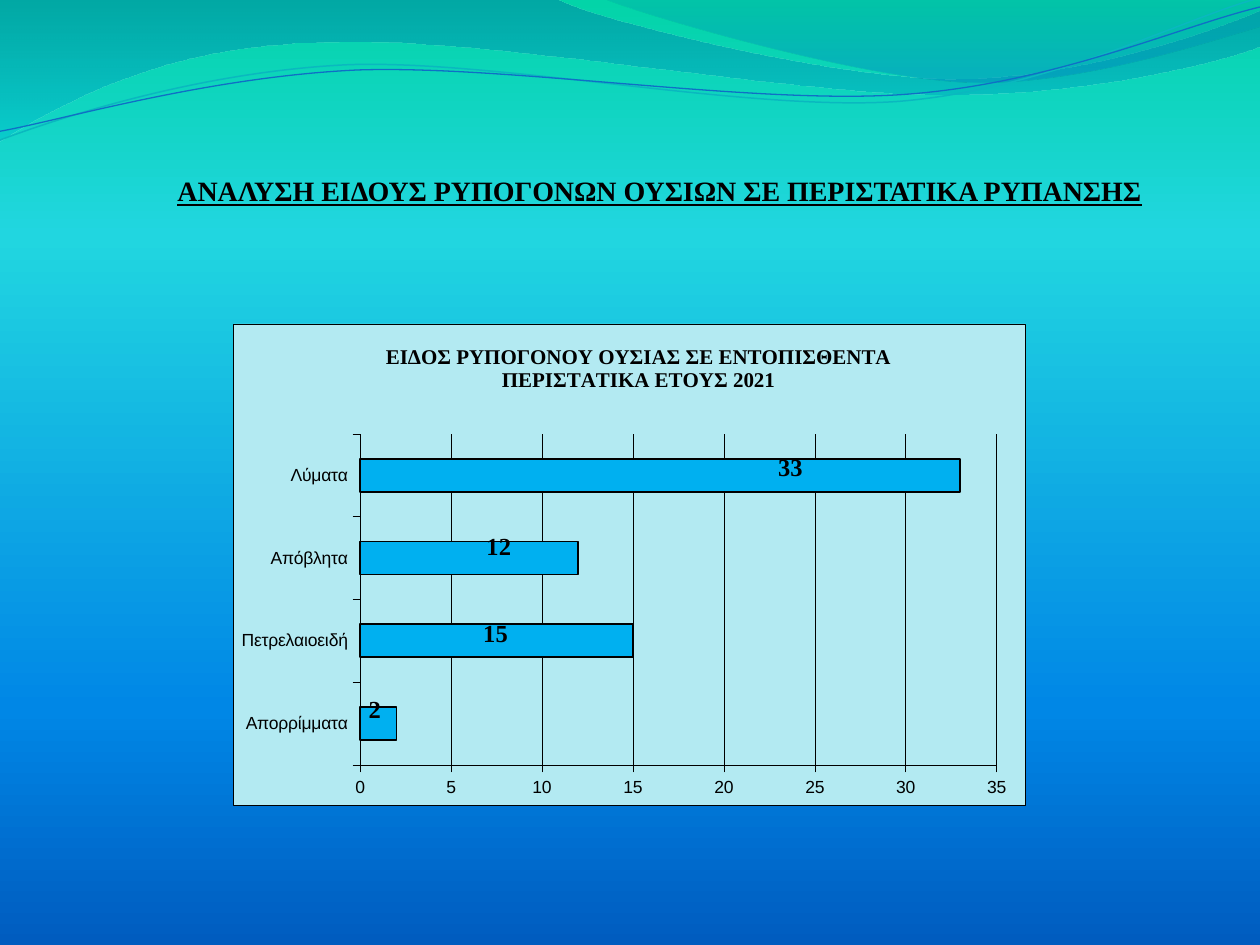
from lxml import etree
from pptx import Presentation
from pptx.chart.data import CategoryChartData
from pptx.dml.color import RGBColor
from pptx.enum.chart import XL_CHART_TYPE, XL_LABEL_POSITION, XL_TICK_LABEL_POSITION, XL_TICK_MARK
from pptx.enum.text import MSO_ANCHOR, PP_ALIGN
from pptx.oxml import parse_xml
from pptx.oxml.ns import nsdecls, qn
from pptx.util import Pt

BAR = XL_CHART_TYPE.BAR_CLUSTERED
CENTER_LABEL = XL_LABEL_POSITION.CENTER
LOW = XL_TICK_LABEL_POSITION.LOW
OUTSIDE = XL_TICK_MARK.OUTSIDE
BOTTOM = MSO_ANCHOR.BOTTOM
CENTER = PP_ALIGN.CENTER
SERIF, SANS = "Times New Roman", "Arial"

BACKGROUND = [(0, "03D4A8", 100), (25, "21D6E0", 100), (75, "0087E6", 100), (100, "005CBF", 100)]
WIDE_FILL = [(0, "0074A1", 45), (100, "00C6CF", 55)]
CORNER_FILL = [(0, "00A1A9", 30), (80, "008BBF", 45)]
WIDE_BAND = [(0, -1), (317, -1), (343, 12, 478, 45, 546, 45), (614, 45, 690, 19, 720, 6),
             (721, 26), (708, 32, 626, 55, 537, 54), (448, 54, 275, 20, 185, 24),
             (93, 25, 33, 60, -1, 81)]
CORNER_BAND = [(345, -1), (366, 8, 491, 45, 554, 47), (616, 49, 692, 23, 720, 15), (720, 0)]
LIGHT_LINE = [(0, 80), (35, 67, 114, 41, 199, 37), (284, 34, 427, 64, 513, 58),
              (600, 51, 675, 11, 719, -1)]
DARK_LINE = [(0, 75), (34, 69, 118, 44, 204, 40), (290, 37, 430, 60, 516, 54),
             (602, 48, 674, 15, 720, 4)]

SUBSTANCES = [("Απορρίμματα", 2, -2, -8), ("Πετρελαιοειδή", 15, -0.5, -4),
              ("Απόβλητα", 12, 17, -6.5), ("Λύματα", 33, 74.5, -4.5)]


def rgb(value):
    """Return the colour for a hex string."""
    return RGBColor.from_string(value)


def set_font(font, name, size, bold=False):
    """Format a font in black."""
    font.name, font.size, font.bold = name, Pt(size), bold
    font.color.rgb = rgb("000000")


def set_line(line, color, width):
    """Give a line its colour and width."""
    line.color.rgb = rgb(color)
    line.width = Pt(width)


def set_gradient(fill, element, stops):
    """Fill an element downwards with (position, colour, opacity) stops."""
    fill.gradient()
    fill.gradient_angle = 270
    stop_list = next(element.iter(qn("a:gsLst")))
    for old in list(stop_list):
        stop_list.remove(old)
    for position, color, opacity in stops:
        stop = etree.SubElement(stop_list, qn("a:gs"), pos=str(position * 1000))
        tint = etree.SubElement(stop, qn("a:srgbClr"), val=color)
        if opacity < 100:
            etree.SubElement(tint, qn("a:alpha"), val=str(opacity * 1000))


def bend(sp, steps):
    """Join the segments of each six-number step into one cubic curve."""
    segments = iter(list(sp._element.iter(qn("a:lnTo"))))
    for step in steps[1:]:
        first = next(segments)
        if len(step) == 2:
            continue
        curve = etree.Element(qn("a:cubicBezTo"))
        first.addprevious(curve)
        for segment in (first, next(segments), next(segments)):
            curve.append(segment[0])
            segment.getparent().remove(segment)


def add_wave(s, left, top, steps, stops=None, line=None):
    """Draw one wave behind the title, as a filled band or an open line."""
    points = [(Pt(left + step[i]), Pt(top + step[i + 1]))
              for step in steps for i in range(0, len(step), 2)]
    builder = s.shapes.build_freeform(*points[0])
    builder.add_line_segments(points[1:], close=bool(stops))
    sp = builder.convert_to_shape()
    bend(sp, steps)
    sp.shadow.inherit = False
    if stops:
        set_gradient(sp.fill, sp._element, stops)
        sp.line.fill.background()
    else:
        sp.fill.background()
        set_line(sp.line, *line)
    s.shapes.title._element.addprevious(sp._element)


def add_waves(s, left, top):
    """Draw the waves along the top of the slide."""
    add_wave(s, left, top, WIDE_BAND, stops=WIDE_FILL)
    add_wave(s, left, top, CORNER_BAND, stops=CORNER_FILL)
    add_wave(s, left, top, LIGHT_LINE, line=("0AB8BF", 0.85))
    add_wave(s, left, top, DARK_LINE, line=("0F6FC6", 0.75))


def add_title(s, left, top, width, height):
    """Place and write the slide title."""
    sp = s.shapes.title
    sp.left, sp.top, sp.width, sp.height = Pt(left), Pt(top), Pt(width), Pt(height)
    tf = sp.text_frame
    tf.word_wrap = True
    tf.vertical_anchor = BOTTOM
    tf.margin_left = tf.margin_right = tf.margin_bottom = 0
    tf.margin_top = Pt(3.6)
    p = tf.paragraphs[0]
    p.alignment = CENTER
    r = p.add_run()
    r.text = "ΑΝΑΛΥΣΗ ΕΙΔΟΥΣ ΡΥΠΟΓΟΝΩΝ ΟΥΣΙΩΝ ΣΕ ΠΕΡΙΣΤΑΤΙΚΑ ΡΥΠΑΝΣΗΣ"
    set_font(r.font, SERIF, 16, True)
    r.font.underline = True


def set_layout(parent, index, **values):
    """Give a chart part a manual layout at a child index."""
    for old in parent.findall(qn("c:layout")):
        parent.remove(old)
    layout = etree.Element(qn("c:layout"))
    manual = etree.SubElement(layout, qn("c:manualLayout"))
    for name, value in values.items():
        etree.SubElement(manual, qn("c:" + name), val=str(value))
    parent.insert(index, layout)


def format_axis(axis):
    """Format the line, ticks and labels of an axis."""
    axis.major_tick_mark = OUTSIDE
    set_font(axis.tick_labels.font, SANS, 10)
    set_line(axis.format.line, "000000", 0.25)


def format_chart_area(chart):
    """Fill and outline the chart area."""
    chart._chartSpace.chart.addnext(parse_xml(
        f'<c:spPr {nsdecls("c", "a")}>'
        '<a:solidFill><a:srgbClr val="B3EAF2"/></a:solidFill>'
        '<a:ln w="3175"><a:solidFill><a:srgbClr val="000000"/></a:solidFill></a:ln></c:spPr>'))


def add_labels(series, width, height):
    """Show the values, each moved from the middle of its bar."""
    labels = series.data_labels
    labels.show_value = True
    set_font(labels.font, SERIF, 14, True)
    for leader in labels._element.findall(qn("c:showLeaderLines")):
        leader.set("val", "0")
    for i, (_, _, dx, dy) in enumerate(SUBSTANCES):
        label = series.points[i].data_label
        set_font(label.font, SERIF, 14, True)
        label.position = CENTER_LABEL
        set_layout(label._get_or_add_dLbl(), 1, x=dx / width, y=dy / height)


def add_substance_chart(s, left, top, width, height):
    """Add the bar chart of incidents by substance."""
    data = CategoryChartData()
    data.categories = [name for name, *_ in SUBSTANCES]
    data.add_series("Series 1", [value for _, value, *_ in SUBSTANCES])
    chart = s.shapes.add_chart(BAR, Pt(left), Pt(top), Pt(width), Pt(height), data).chart
    chart.has_legend = False
    set_font(chart.font, SANS, 10)
    format_chart_area(chart)

    r = chart.chart_title.text_frame.paragraphs[0].add_run()
    r.text = "ΕΙΔΟΣ ΡΥΠΟΓΟΝΟΥ ΟΥΣΙΑΣ ΣΕ ΕΝΤΟΠΙΣΘΕΝΤΑ ΠΕΡΙΣΤΑΤΙΚΑ ΕΤΟΥΣ 2021"
    set_font(r.font, SERIF, 12, True)
    set_layout(chart.chart_title._element, 1, xMode="edge", yMode="edge",
               x=85 / width, y=9.3 / height)

    format_axis(chart.category_axis)
    chart.category_axis.tick_label_position = LOW
    values = chart.value_axis
    format_axis(values)
    values.minimum_scale, values.maximum_scale, values.major_unit = 0, 35, 5
    set_line(values.major_gridlines.format.line, "000000", 0.25)

    plot = chart.plots[0]
    plot.gap_width = 150
    plot.vary_by_categories = False
    set_layout(plot._element.getparent(), 0, layoutTarget="inner", xMode="edge", yMode="edge",
               x=72.5 / width, y=63 / height, w=364 / width, h=189.3 / height)
    series = plot.series[0]
    series.format.fill.solid()
    series.format.fill.fore_color.rgb = rgb("00B0F0")
    set_line(series.format.line, "000000", 1)
    add_labels(series, width, height)


def main():
    """Build the slide and save it."""
    prs = Presentation()
    prs.slide_width, prs.slide_height = Pt(720), Pt(540)
    s = prs.slides.add_slide(prs.slide_layouts[5])
    set_gradient(s.background.fill, s._element, BACKGROUND)
    add_waves(s, 0, 0)
    add_title(s, 82, 55.5, 590, 63)
    add_substance_chart(s, 133.2, 185, 453, 275.3)
    prs.save("out.pptx")


if __name__ == "__main__":
    main()
